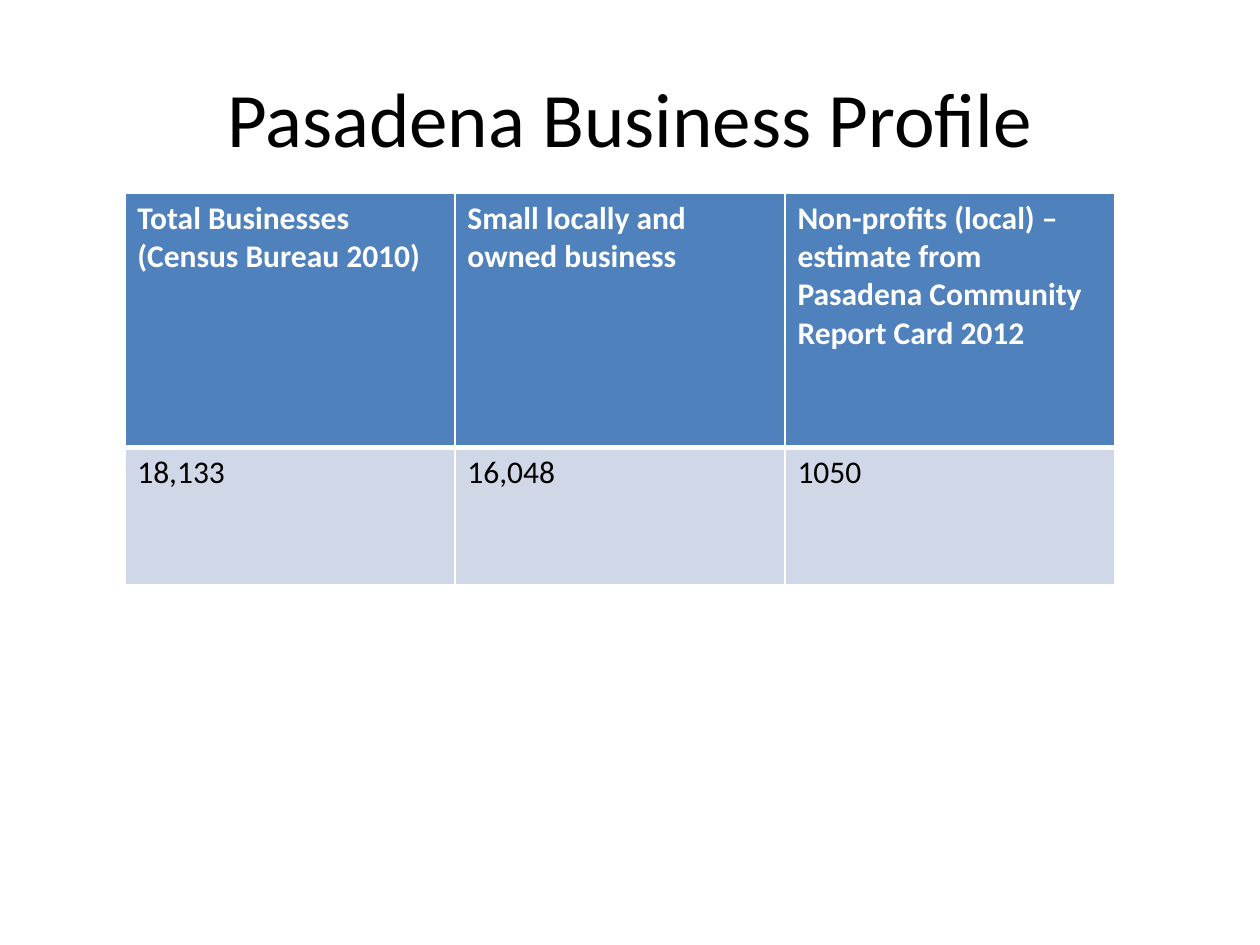
from lxml.etree import SubElement
from pptx import Presentation
from pptx.dml.color import RGBColor
from pptx.enum.text import MSO_ANCHOR, PP_ALIGN
from pptx.oxml.ns import qn
from pptx.util import Inches, Pt

TITLE = "Pasadena Business Profile"
ROWS = [
    ["Total Businesses (Census Bureau 2010)",
     "Small locally and owned business",
     "Non-profits (local) – estimate from Pasadena Community Report Card 2012"],
    ["18,133", "16,048", "1050"],
]
ROW_HEIGHTS = [2.02, 1.09]
COLUMN_WIDTH = 2.62

FONT = "Calibri"
BLACK = RGBColor(0x00, 0x00, 0x00)
WHITE = RGBColor(0xFF, 0xFF, 0xFF)
HEADER_BLUE = RGBColor(0x4F, 0x81, 0xBD)
BODY_BLUE = RGBColor(0xD0, 0xD8, 0xE8)


def format_text(para, size, color, bold=False):
    for span in para.runs:
        span.font.name = FONT
        span.font.size = Pt(size)
        span.font.bold = bold
        span.font.color.rgb = color


def add_borders(cell, widths):
    """Draw white borders; widths maps each side's tag to points."""
    properties = cell._tc.get_or_add_tcPr()
    for side, width in widths.items():
        line = SubElement(properties, qn(f"a:{side}"), w=str(Pt(width)))
        fill = SubElement(line, qn("a:solidFill"))
        SubElement(fill, qn("a:srgbClr"), val=str(WHITE))


def add_title(page):
    box = page.shapes.add_textbox(Inches(0.5), Inches(0.3), Inches(9), Inches(1.25))
    frame = box.text_frame
    frame.word_wrap = True
    frame.vertical_anchor = MSO_ANCHOR.MIDDLE
    frame.text = TITLE
    frame.paragraphs[0].alignment = PP_ALIGN.CENTER
    format_text(frame.paragraphs[0], 44, BLACK)


def add_profile_table(page):
    columns = len(ROWS[0])
    table = page.shapes.add_table(
        len(ROWS), columns, Inches(0.99), Inches(1.53),
        Inches(COLUMN_WIDTH * columns), Inches(sum(ROW_HEIGHTS))).table
    for column in table.columns:
        column.width = Inches(COLUMN_WIDTH)
    for row_index, texts in enumerate(ROWS):
        table.rows[row_index].height = Inches(ROW_HEIGHTS[row_index])
        header = row_index == 0
        borders = {"lnL": 1, "lnR": 1,
                   "lnT": 1 if header else 3, "lnB": 3 if header else 1}
        for column_index, text in enumerate(texts):
            cell = table.cell(row_index, column_index)
            cell.text_frame.text = text
            format_text(cell.text_frame.paragraphs[0], 18,
                        WHITE if header else BLACK, bold=header)
            add_borders(cell, borders)
            cell.fill.solid()
            cell.fill.fore_color.rgb = HEADER_BLUE if header else BODY_BLUE


def main():
    deck = Presentation()
    deck.slide_width, deck.slide_height = Inches(10), Inches(7.5)
    page = deck.slides.add_slide(deck.slide_layouts[6])
    add_title(page)
    add_profile_table(page)
    deck.save("out.pptx")


if __name__ == "__main__":
    main()
